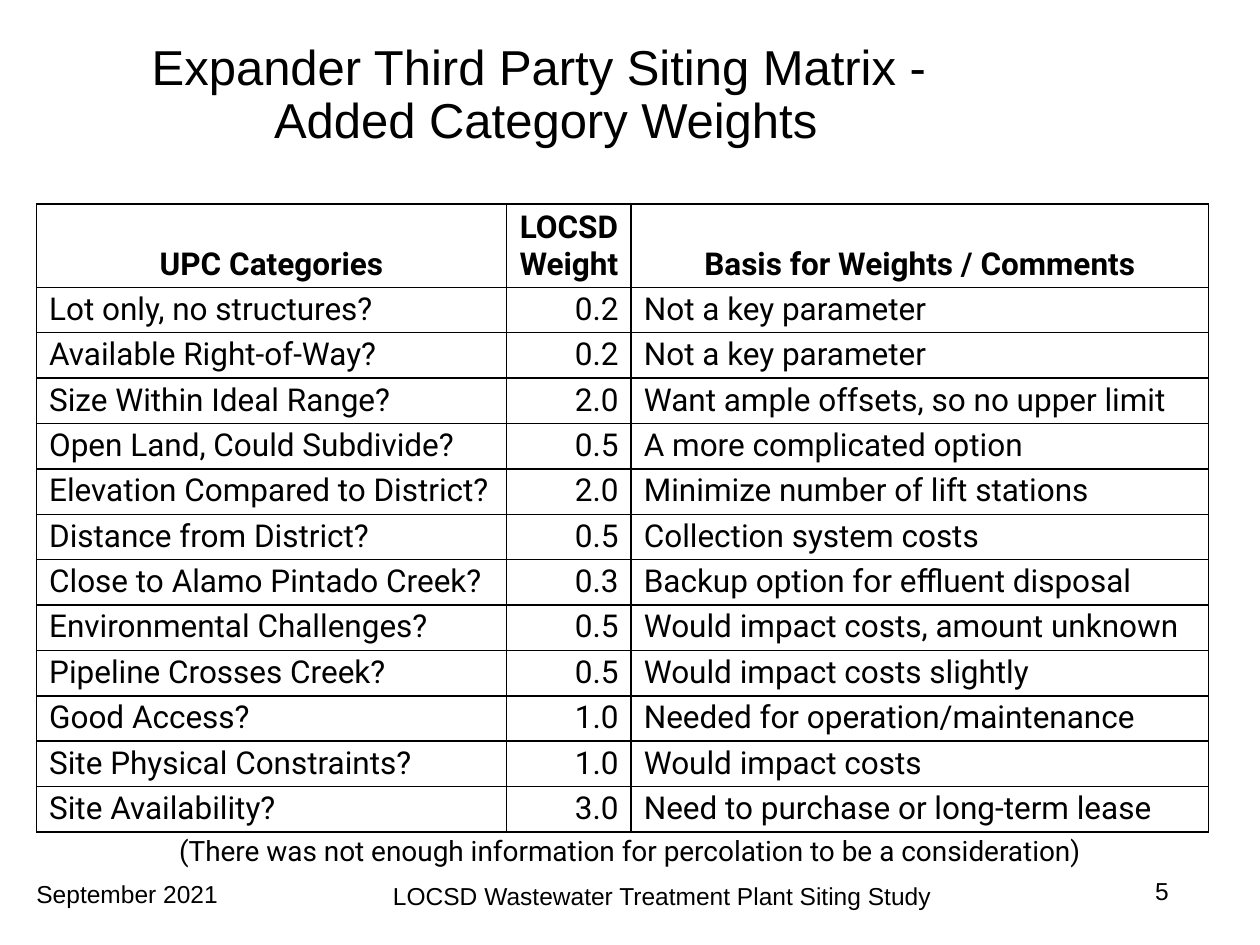
from lxml import etree
from pptx import Presentation
from pptx import util as u
from pptx.dml import color
from pptx.enum import text
from pptx.oxml import ns

COLORS = {"ink": "000000", "paper": "FFFFFF"}
LEFT, CENTER, RIGHT = text.PP_ALIGN.LEFT, text.PP_ALIGN.CENTER, text.PP_ALIGN.RIGHT

HEADINGS = ("UPC Categories", "LOCSD Weight", "Basis for Weights / Comments")
CATEGORIES = [
    ("Lot only, no structures?", "0.2", "Not a key parameter"),
    ("Available Right-of-Way?", "0.2", "Not a key parameter"),
    ("Size Within Ideal Range?", "2.0", "Want ample offsets, so no upper limit"),
    ("Open Land, Could Subdivide?", "0.5", "A more complicated option"),
    ("Elevation Compared to District?", "2.0", "Minimize number of lift stations"),
    ("Distance from District?", "0.5", "Collection system costs"),
    ("Close to Alamo Pintado Creek?", "0.3", "Backup option for effluent disposal"),
    ("Environmental Challenges?", "0.5", "Would impact costs, amount unknown"),
    ("Pipeline Crosses Creek?", "0.5", "Would impact costs slightly"),
    ("Good Access?", "1.0", "Needed for operation/maintenance"),
    ("Site Physical Constraints?", "1.0", "Would impact costs"),
    ("Site Availability?", "3.0", "Need to purchase or long-term lease"),
]
FOOTERS = [
    ("September 2021", (0.19, 6.93, 1.72, 0.34)),
    ("LOCSD Wastewater Treatment Plant Siting Study", (3.02, 6.94, 4.48, 0.34)),
    ("5", (9.07, 6.9, 0.48, 0.34)),
]


def inches(box):
    return [u.Inches(length) for length in box]


def write(frame, words, size, font, align=LEFT, bold=False):
    frame.text = words
    for paragraph in frame.paragraphs:
        paragraph.alignment = align
        for run in paragraph.runs:
            run.font.size = u.Pt(size)
            run.font.name = font
            run.font.bold = bold
            run.font.color.rgb = color.RGBColor.from_string(COLORS["ink"])


def add_title(slide, box):
    title = slide.shapes.title
    title.left, title.top, title.width, title.height = inches(box)
    frame = title.text_frame
    write(frame, "Expander Third Party Siting Matrix - \vAdded Category Weights",
          28, "Arial", CENTER)
    frame.vertical_anchor = text.MSO_ANCHOR.MIDDLE
    frame.paragraphs[0].line_spacing = 0.9


def add_borders(cell):
    properties = cell._tc.get_or_add_tcPr()
    for position, side in enumerate(("lnL", "lnR", "lnT", "lnB")):
        line = etree.Element(ns.qn(f"a:{side}"), w=str(u.Pt(1)))
        fill = etree.SubElement(line, ns.qn("a:solidFill"))
        etree.SubElement(fill, ns.qn("a:srgbClr"), val=COLORS["ink"])
        properties.insert(position, line)


def add_matrix(slide, box):
    rows = [HEADINGS] + CATEGORIES
    matrix = slide.shapes.add_table(len(rows), len(HEADINGS), *inches(box)).table
    for column, width in zip(matrix.columns, (3.73, 0.99, 4.58)):
        column.width = u.Inches(width)
    heading_height = 0.65
    row_height = (box[3] - heading_height) / len(CATEGORIES)
    for row_number, entries in enumerate(rows):
        heading = row_number == 0
        matrix.rows[row_number].height = u.Inches(heading_height if heading else row_height)
        for column_number, entry in enumerate(entries):
            cell = matrix.cell(row_number, column_number)
            align = CENTER if heading else (LEFT, RIGHT, LEFT)[column_number]
            write(cell.text_frame, entry, 18, "Roboto", align, heading)
            cell.vertical_anchor = text.MSO_ANCHOR.BOTTOM if heading else text.MSO_ANCHOR.TOP
            cell.margin_left = cell.margin_right = u.Inches(0.1)
            cell.margin_top = cell.margin_bottom = u.Inches(0.03)
            cell.fill.solid()
            cell.fill.fore_color.rgb = color.RGBColor.from_string(COLORS["paper"])
            add_borders(cell)


def add_note(slide, box):
    frame = slide.shapes.add_textbox(*inches(box)).text_frame
    frame.word_wrap = True
    write(frame, "(There was not enough information for percolation to be a consideration)",
          16, "Roboto", CENTER)
    frame.paragraphs[0].line_spacing = 0.9


def add_footer(slide, words, box):
    frame = slide.shapes.add_textbox(*inches(box)).text_frame
    frame.word_wrap = False
    write(frame, words, 14, "Arial")


def main():
    deck = Presentation()
    deck.slide_width, deck.slide_height = u.Inches(10), u.Inches(7.5)
    slide = deck.slides.add_slide(deck.slide_layouts.get_by_name("Title Only"))

    # Footer line
    for words, box in FOOTERS:
        add_footer(slide, words, box)

    # Title, weights and closing note
    add_title(slide, (0.69, 0.21, 7.28, 1.11))
    add_matrix(slide, (0.29, 1.62, 9.3, 4.89))
    add_note(slide, (0, 6.6, 10, 0.39))

    deck.save("out.pptx")


if __name__ == "__main__":
    main()
